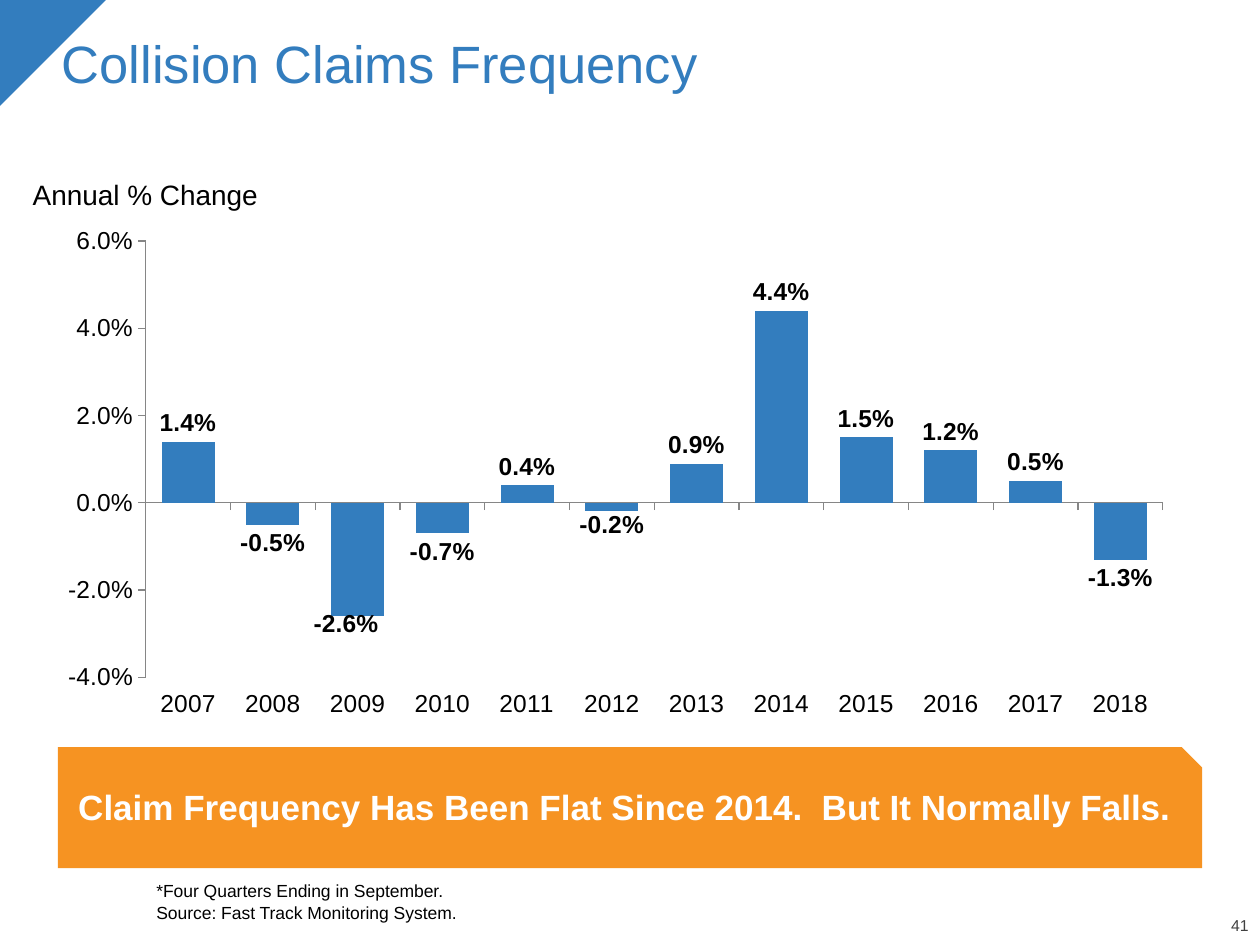
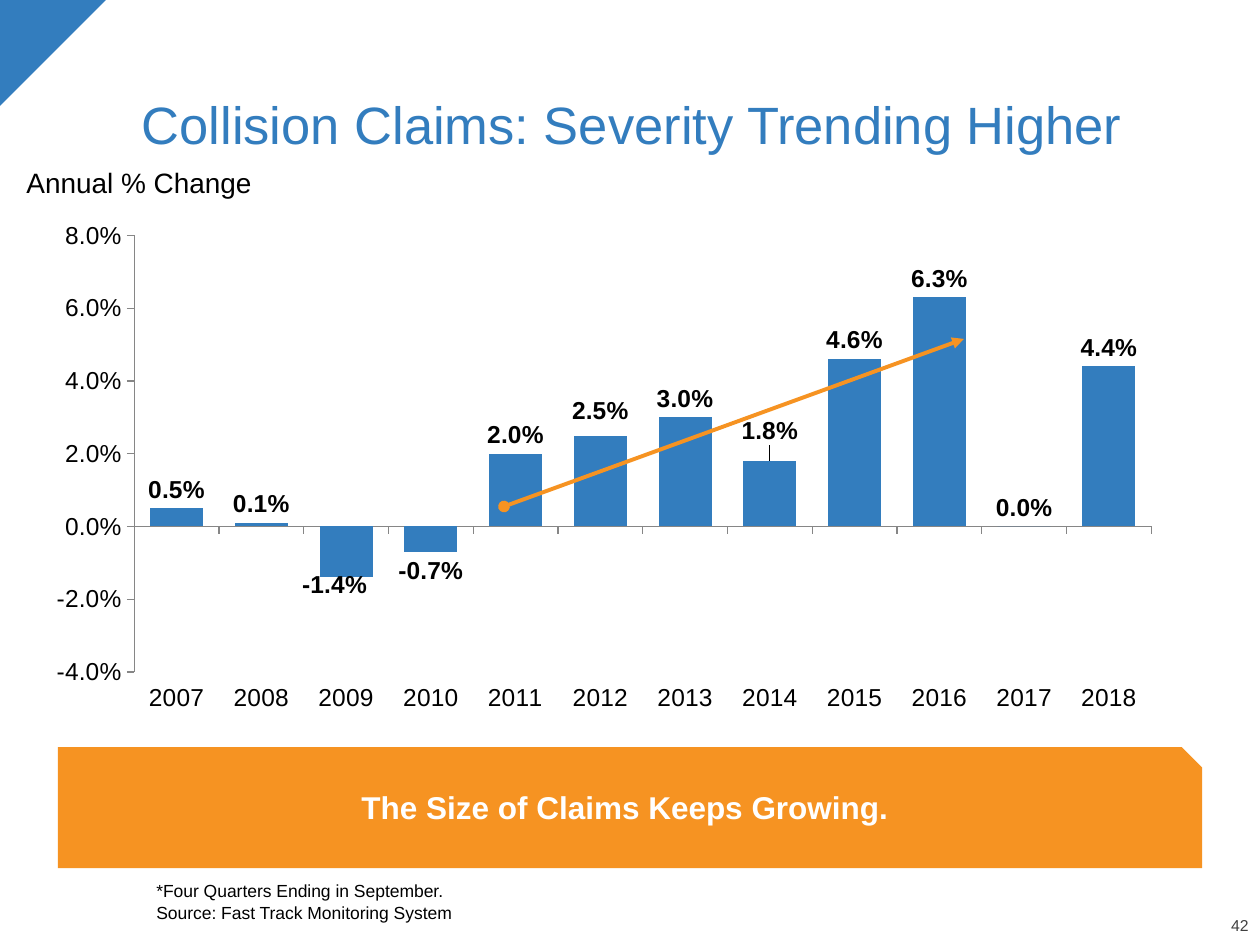
from lxml.etree import SubElement
from pptx import Presentation
from pptx.chart.data import CategoryChartData
from pptx.dml.color import RGBColor
from pptx.enum.chart import XL_CHART_TYPE as ChartType
from pptx.enum.chart import XL_LABEL_POSITION as LabelPosition
from pptx.enum.chart import XL_TICK_LABEL_POSITION as TickLabels
from pptx.enum.chart import XL_TICK_MARK as TickMark
from pptx.enum.shapes import MSO_CONNECTOR as Connector
from pptx.enum.shapes import MSO_SHAPE as Shape
from pptx.enum.text import MSO_ANCHOR as Anchor
from pptx.enum.text import MSO_AUTO_SIZE as AutoSize
from pptx.enum.text import PP_ALIGN as Align
from pptx.oxml import parse_xml
from pptx.oxml.ns import nsdecls, qn
from pptx.util import Inches, Pt

BLUE, ORANGE, BLACK, WHITE = "337DBE", "F69322", "000000", "FFFFFF"
NUMBER_GREY, AXIS_GREY = "404040", "868686"
PERCENT = "0.0%"
YEARS = [str(year) for year in range(2007, 2019)]
FREQUENCY = [0.014, -0.005, -0.026, -0.007, 0.004, -0.002,
             0.009, 0.044, 0.015, 0.012, 0.005, -0.013]
SEVERITY = [0.005, 0.001, -0.014, -0.007, 0.02, 0.025,
            0.03, 0.018, 0.046, 0.063, 0, 0.044]
LABEL_SHIFTS = {2: (-0.01, -0.02), 5: (0, -0.01)}


def color(value):
    return RGBColor.from_string(value)


def manual_layout(target="", modes="", **fractions):
    sizes = "".join(f'<c:{key} val="{value}"/>' for key, value in fractions.items())
    return parse_xml(f'<c:layout {nsdecls("c")}><c:manualLayout>{target}{modes}{sizes}'
                     '</c:manualLayout></c:layout>')


class ClaimsDeck:
    """Claims slides in one style, built on the current slide."""

    def __init__(self):
        self.deck = Presentation()
        self.deck.slide_width, self.deck.slide_height = Inches(10), Inches(7.5)
        self.page = None

    def style(self, font, size, ink, bold=False):
        font.name, font.size, font.bold = "Arial", Pt(size), bold
        font.color.rgb = color(ink)

    def set_text(self, box, lines, size, ink, align=Align.LEFT, anchor=Anchor.TOP,
                 insets=(0.1, 0.05, 0.1, 0.05), bold=False, gap=0):
        frame = box.text_frame
        frame.word_wrap, frame.auto_size = True, AutoSize.NONE
        frame.vertical_anchor = anchor
        (frame.margin_left, frame.margin_top,
         frame.margin_right, frame.margin_bottom) = map(Inches, insets)
        frame.text = "\n".join(lines)
        for index, para in enumerate(frame.paragraphs):
            properties = para._p.get_or_add_pPr()
            properties.set("marL", "0")
            properties.set("indent", "0")
            SubElement(properties, qn("a:buNone"))
            para.alignment, para.line_spacing = align, 0.9
            para.space_before = Pt(gap if index else 0)
            self.style(para.font, size, ink, bold)

    def placeholder(self, index, place, lines, size, ink, **options):
        box = self.page.placeholders[index]
        box.left, box.top, box.width, box.height = map(Inches, place)
        self.set_text(box, lines, size, ink, **options)

    def shape(self, kind, place, fill):
        shape = self.page.shapes.add_shape(kind, *map(Inches, place))
        shape.shadow.inherit = False
        shape.fill.solid()
        shape.fill.fore_color.rgb = color(fill)
        shape.line.fill.background()
        return shape

    def add_page(self, number, title, **options):
        self.page = self.deck.slides.add_slide(self.deck.slide_layouts[3])
        self.shape(Shape.RIGHT_TRIANGLE, (0, 0, 0.84, 0.84), BLUE).rotation = 90
        box = self.page.shapes.add_textbox(*map(Inches, (9.43, 7.29, 0.48, 0.13)))
        self.set_text(box, [str(number)], 9, NUMBER_GREY, Align.RIGHT, Anchor.BOTTOM, (0,) * 4)
        self.placeholder(0, (0.39, 0.25, 9.25, 1.04), [title], 30, BLUE, **options)

    def axis_caption(self, left, top):
        self.placeholder(1, (left, top, 2.08, 0.43), ["Annual % Change"], 16, BLACK)

    def footnote(self, source):
        self.placeholder(2, (1.24, 6.88, 8.4, 0.45),
                         ["*Four Quarters Ending in September.", source], 10, BLACK,
                         anchor=Anchor.BOTTOM, insets=(0,) * 4, gap=2)

    def banner(self, message, size):
        box = self.shape(Shape.SNIP_1_RECTANGLE, (0.46, 5.93, 9.08, 0.96), ORANGE)
        self.set_text(box, [message], size, WHITE, Align.CENTER, Anchor.MIDDLE,
                      (0.1, 0.05, 0.1, 0.1), bold=True)

    def column_chart(self, values, maximum, plot_left, plot_top, shifts):
        data = CategoryChartData(number_format=PERCENT)
        data.categories = YEARS
        data.add_series("Series 1", values)
        place = map(Inches, (0.34, 1.61, 9.07, 4.33))
        chart = self.page.shapes.add_chart(ChartType.COLUMN_CLUSTERED, *place, data).chart
        chart.has_legend = chart.has_title = False
        self.style(chart.font, 14, BLACK)
        plot = chart.plots[0]
        plot.gap_width, plot.vary_by_categories = 60, False
        self.style_axes(chart, maximum)
        series = plot.series[0]
        series.invert_if_negative = False
        series.format.fill.solid()
        series.format.fill.fore_color.rgb = color(BLUE)
        self.label_columns(chart, series, shifts)
        area = chart.element.xpath("//c:plotArea")[0]
        for layout in area.findall(qn("c:layout")):
            area.remove(layout)
        area.insert(0, manual_layout(
            '<c:layoutTarget val="inner"/>', '<c:xMode val="edge"/><c:yMode val="edge"/>',
            x=plot_left, y=plot_top, w=0.89, h=0.8))

    def style_axes(self, chart, maximum):
        for axis in (chart.category_axis, chart.value_axis):
            axis.has_major_gridlines = False
            axis.major_tick_mark, axis.minor_tick_mark = TickMark.OUTSIDE, TickMark.NONE
            axis.format.line.color.rgb = color(AXIS_GREY)
            axis.format.line.width = Pt(0.75)
        chart.category_axis.tick_label_position = TickLabels.LOW
        scale = chart.value_axis
        scale.minimum_scale, scale.maximum_scale, scale.major_unit = -0.04, maximum, 0.02
        scale.tick_labels.number_format = PERCENT
        scale.tick_labels.number_format_is_linked = False

    def label_columns(self, chart, series, shifts):
        labels = series.data_labels
        labels.show_value, labels.position = True, LabelPosition.OUTSIDE_END
        labels.number_format, labels.number_format_is_linked = PERCENT, False
        self.style(labels.font, 14, BLACK, bold=True)
        for index in shifts:
            label = series.points[index].data_label
            self.style(label.font, 14, BLACK, bold=True)
            label.position = LabelPosition.OUTSIDE_END
        for element, index in zip(chart.element.xpath("//c:dLbl"), sorted(shifts)):
            across, down = shifts[index]
            element.insert(1, manual_layout(x=across, y=down))

    def trend_arrow(self, start, end):
        arrow = self.page.shapes.add_connector(Connector.STRAIGHT, *map(Inches, start + end))
        arrow.line.color.rgb, arrow.line.width = color(ORANGE), Pt(2.25)
        outline = arrow.line._get_or_add_ln()
        SubElement(outline, qn("a:headEnd"), type="oval")
        SubElement(outline, qn("a:tailEnd"), type="triangle")
        SubElement(arrow._element.spPr, qn("a:effectLst"))


def main():
    claims = ClaimsDeck()

    claims.add_page(41, "Collision Claims Frequency")
    claims.axis_caption(0.16, 1.39)
    claims.footnote("Source: Fast Track Monitoring System.")
    claims.banner("Claim Frequency Has Been Flat Since 2014.  But It Normally Falls.", 20)
    claims.column_chart(FREQUENCY, 0.06, 0.09, 0.07, LABEL_SHIFTS)

    claims.add_page(42, "Collision Claims: Severity Trending Higher",
                    align=Align.CENTER, anchor=Anchor.BOTTOM)
    claims.axis_caption(0.11, 1.29)
    claims.footnote("Source: Fast Track Monitoring System")
    claims.banner("The Size of Claims Keeps Growing.", 18)
    claims.column_chart(SEVERITY, 0.08, 0.08, 0.06, {**LABEL_SHIFTS, 7: (0, -0.02)})
    claims.trend_arrow((4, 4.02), (7.65, 2.69))

    claims.deck.save("out.pptx")


if __name__ == "__main__":
    main()
